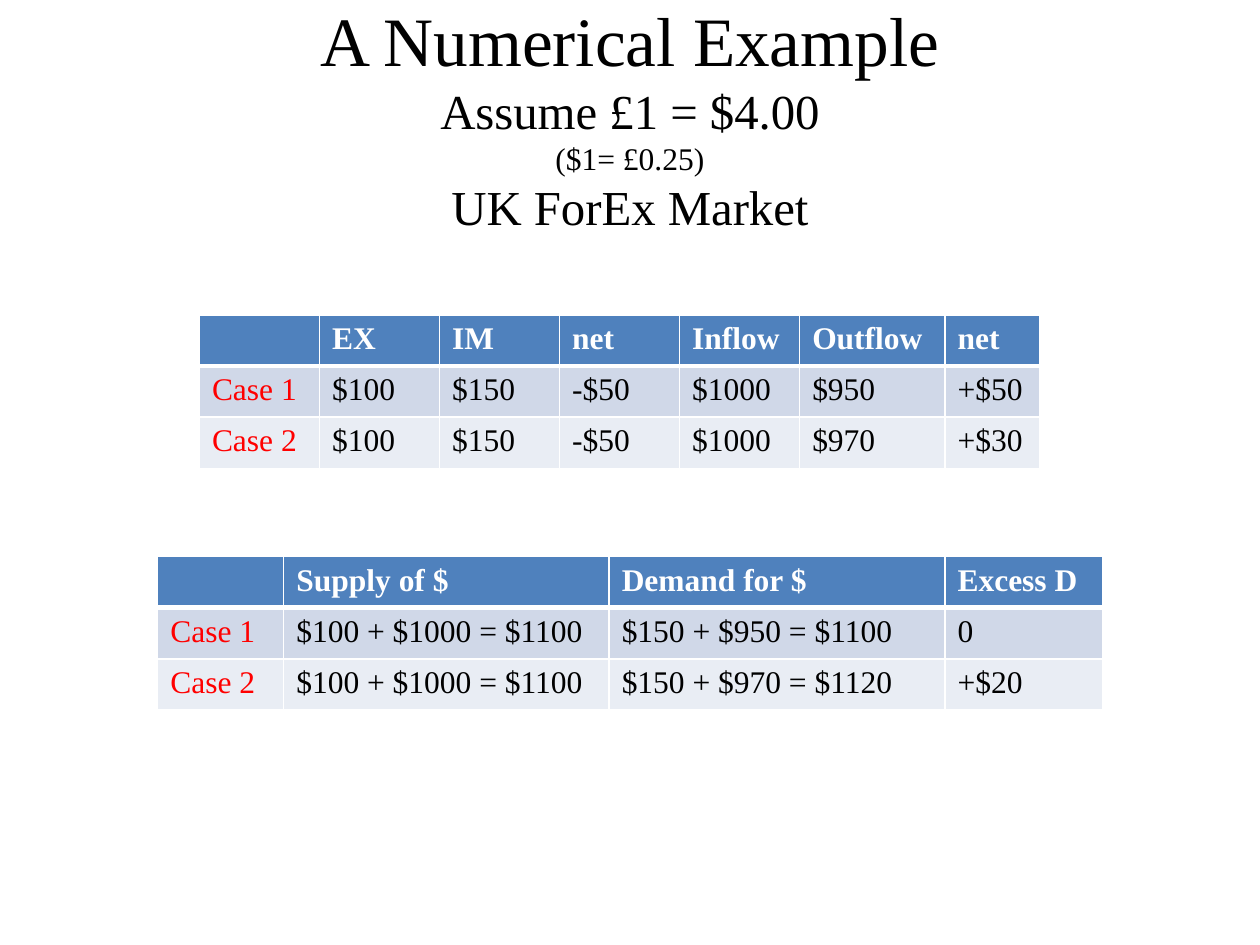
from lxml.etree import SubElement
from pptx import Presentation
from pptx.dml.color import RGBColor
from pptx.enum.text import MSO_ANCHOR, PP_ALIGN
from pptx.oxml.ns import qn
from pptx.util import Cm, Pt

FONT = "Times New Roman"
BLACK = RGBColor(0x00, 0x00, 0x00)
WHITE = RGBColor(0xFF, 0xFF, 0xFF)
RED = RGBColor(0xFF, 0x00, 0x00)
HEADER_BLUE = RGBColor(0x4F, 0x81, 0xBD)
BAND_FILLS = [RGBColor(0xD0, 0xD8, 0xE8), RGBColor(0xE9, 0xED, 0xF4)]
ROW_HEIGHT = 1.03

TITLE_LINES = [
    ("A Numerical Example", 39.6),
    ("Assume £1 = $4.00", 27.9),
    ("($1= £0.25)", 18),
    ("UK ForEx Market", 27.9),
]
FLOWS = [
    ["", "EX", "IM", "net", "Inflow", "Outflow", "net"],
    ["Case 1", "$100", "$150", "-$50", "$1000", "$950", "+$50"],
    ["Case 2", "$100", "$150", "-$50", "$1000", "$970", "+$30"],
]
DOLLAR_MARKET = [
    ["", "Supply of $", "Demand for $", "Excess D"],
    ["Case 1", "$100 + $1000 = $1100", "$150 + $950 = $1100", "0"],
    ["Case 2", "$100 + $1000 = $1100", "$150 + $970 = $1120", "+$20"],
]


def format_run(r, size, color, bold=False):
    r.font.name = FONT
    r.font.size = Pt(size)
    r.font.bold = bold
    r.font.color.rgb = color


def add_title(s):
    sp = s.shapes.add_textbox(Cm(1.27), Cm(0.76), Cm(22.86), Cm(3.18))
    tf = sp.text_frame
    tf.word_wrap = True
    tf.vertical_anchor = MSO_ANCHOR.MIDDLE
    p = tf.paragraphs[0]
    p.text = "\v".join(text for text, _ in TITLE_LINES)
    p.alignment = PP_ALIGN.CENTER
    for r, (_, size) in zip(p.runs, TITLE_LINES):
        format_run(r, size, BLACK)


def set_borders(cell, row):
    """Draw thin white borders, with a thick one between header and body."""
    widths = {"L": 1, "R": 1, "T": 3 if row == 1 else 1, "B": 3 if row == 0 else 1}
    tcPr = cell._tc.get_or_add_tcPr()
    for side, width in widths.items():
        ln = SubElement(tcPr, qn(f"a:ln{side}"), w=str(Pt(width)))
        fill = SubElement(ln, qn("a:solidFill"))
        SubElement(fill, qn("a:srgbClr"), val=str(WHITE))


def format_cell(cell, row, col):
    set_borders(cell, row)
    header = row == 0
    cell.fill.solid()
    cell.fill.fore_color.rgb = HEADER_BLUE if header else BAND_FILLS[(row - 1) % 2]
    color = WHITE if header else RED if col == 0 else BLACK
    for r in cell.text_frame.paragraphs[0].runs:
        format_run(r, 18, color, header)


def add_data_table(s, left, top, widths, data):
    frame = s.shapes.add_table(len(data), len(widths), Cm(left), Cm(top),
                               Cm(sum(widths)), Cm(ROW_HEIGHT * len(data)))
    table = frame.table
    for column, width in zip(table.columns, widths):
        column.width = Cm(width)
    for row, values in enumerate(data):
        table.rows[row].height = Cm(ROW_HEIGHT)
        for col, value in enumerate(values):
            cell = table.cell(row, col)
            cell.text = value
            format_cell(cell, row, col)


def main():
    prs = Presentation()
    prs.slide_width, prs.slide_height = Cm(25.4), Cm(19.05)
    s = prs.slides.add_slide(prs.slide_layouts[6])
    add_title(s)
    add_data_table(s, 4.02, 6.35, [2.42] * 5 + [2.93, 1.91], FLOWS)
    add_data_table(s, 3.18, 11.22, [2.54, 6.56, 6.77, 3.18], DOLLAR_MARKET)
    prs.save("out.pptx")


if __name__ == "__main__":
    main()
